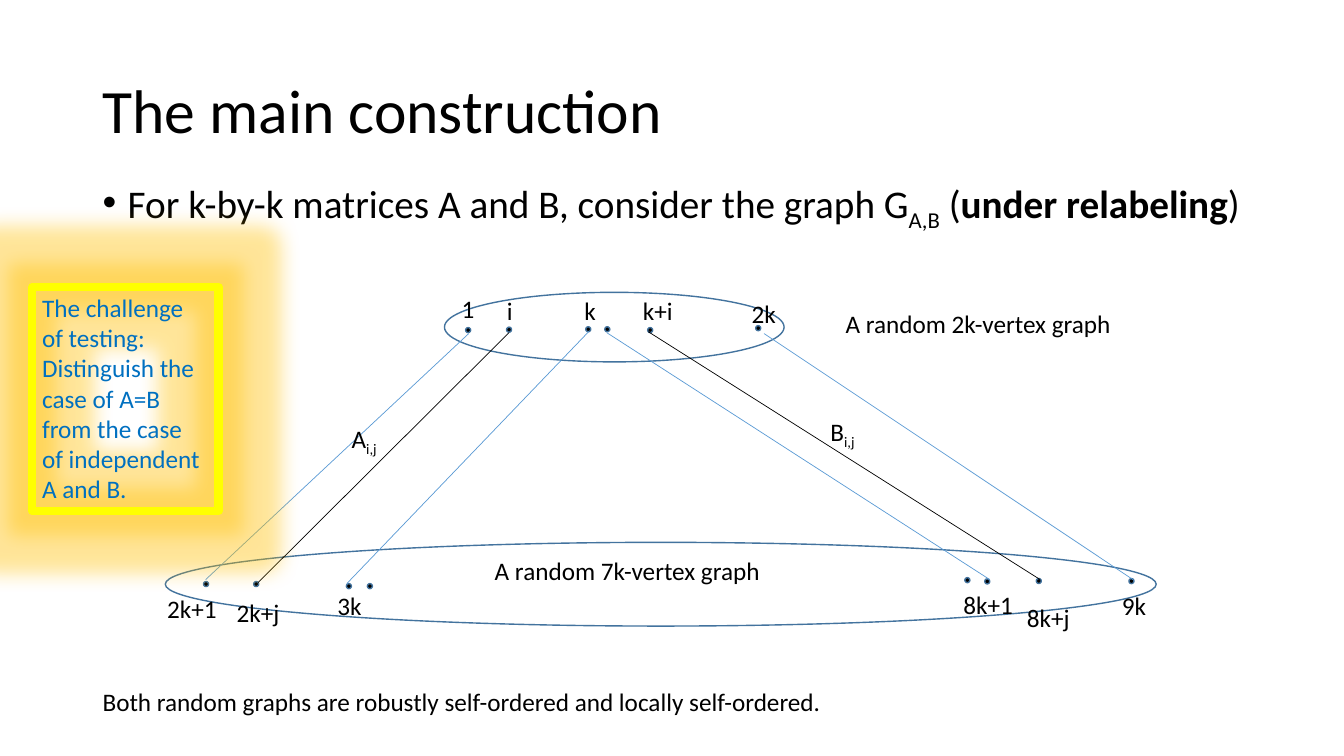
from pptx import Presentation
from pptx.dml.color import RGBColor
from pptx.enum.shapes import MSO_CONNECTOR, MSO_SHAPE
from pptx.enum.text import MSO_ANCHOR, PP_ALIGN
from pptx.oxml.ns import qn
from pptx.util import Pt
from lxml import etree

OVAL, RECT = MSO_SHAPE.OVAL, MSO_SHAPE.RECTANGLE
STRAIGHT = MSO_CONNECTOR.STRAIGHT
TOP, MIDDLE = MSO_ANCHOR.TOP, MSO_ANCHOR.MIDDLE
LEFT = PP_ALIGN.LEFT

THEME = {
    "font": "Calibri", "title": 44, "body": 28, "label": 18,
    "ink": "000000", "paper": "FFFFFF", "outline": "43739E",
    "edge": "5B9BD5", "challenge": "0070C0", "frame": "FFFF00", "glow": "FFC000",
}
SUB, BOLD = "sub", "bold"

TITLE = [("The main construction", None)]
STATEMENT = [
    ("For k-by-k matrices A and B, consider the graph G", None),
    ("A,B", SUB), (" (", None), ("under relabeling", BOLD), (")", None),
]
CHALLENGE = [("The challenge of testing: Distinguish the case of A=B "
              "from the case of independent A and B.", None)]

GRAPH_OUTLINES = [(317.5, 208.8, 242.6, 49.7), (118.1, 387.4, 707.8, 59.8)]
VERTICES = [
    (334.4, 235.8), (363.6, 235.5), (420.2, 235.2), (541.6, 234.4),
    (433.8, 235.2), (464.4, 235.8),
    (147.2, 417.2), (183, 417.2), (249.2, 418.7), (264.2, 418.7),
    (808.2, 415.1), (705.2, 415.3), (691, 414.4), (742, 415),
]
VERTEX_LABELS = [
    ("1", 322.6, 205.9, 23.8), ("i", 355, 207.4, 18.7), ("k", 410.4, 207.4, 23),
    ("k+i", 452.2, 207.4, 36), ("2k", 529.9, 209.5, 31.7),
    ("2k+1", 112.3, 420.5, 50.4), ("2k+j", 162, 423.4, 45.4), ("3k", 234, 418.3, 31.7),
    ("8k+1", 681.1, 417.6, 50.4), ("9k", 794.2, 418.3, 31.7), ("8k+j", 726.5, 427, 45.4),
]
EDGES = [
    ("edge", 334.8, 238.3, 146.9, 414),
    ("edge", 420.5, 236.9, 247.7, 416.9),
    ("edge", 433.4, 237.6, 707, 414),
    ("edge", 545.8, 238.3, 809.3, 414),
    ("ink", 363.6, 237.6, 184.3, 416.2),
    ("ink", 463, 236.9, 743, 414),
]
CAPTIONS = [
    ([("A", None), ("i,j", SUB)], 244.1, 298.8, 36.7),
    ([("B", None), ("i,j", SUB)], 586.1, 293.8, 36.7),
    ([("A random 2k-vertex graph", None)], 596.9, 216.7, 210.2),
    ([("A random 7k-vertex graph", None)], 346.3, 393.1, 210.2),
    ([("Both random graphs are robustly self-ordered and locally self-ordered.", None)],
     66.2, 486.7, 848.2),
]
LABEL_HEIGHT = 29.08
VERTEX_SIZE = 3.6
GLOW_RADIUS = 28


def color(name):
    return RGBColor.from_string(THEME[name])


def write(holder, pieces, size="label", ink="ink", wrap=True, anchor=TOP):
    frame = holder.text_frame
    frame.word_wrap = wrap
    frame.vertical_anchor = anchor
    paragraph = frame.paragraphs[0]
    paragraph.alignment = LEFT
    for words, style in pieces:
        run = paragraph.add_run()
        run.text = words
        run.font.name = THEME["font"]
        run.font.size = Pt(THEME[size])
        run.font.color.rgb = color(ink)
        if style == BOLD:
            run.font.bold = True
        if style == SUB:
            run.font._element.set("baseline", "-25000")
    return paragraph


def add_text(slide, box, pieces, **options):
    holder = slide.shapes.add_textbox(*map(Pt, box))
    return write(holder, pieces, **options)


def add_outline(slide, kind, box, fill, line, width):
    outline = slide.shapes.add_shape(kind, *map(Pt, box))
    outline.shadow.inherit = False
    if fill:
        outline.fill.solid()
        outline.fill.fore_color.rgb = color(fill)
    else:
        outline.fill.background()
    outline.line.color.rgb = color(line)
    outline.line.width = Pt(width)
    return outline


def add_edge(slide, ink, *ends):
    edge = slide.shapes.add_connector(STRAIGHT, *map(Pt, ends))
    edge.line.color.rgb = color(ink)
    edge.line.width = Pt(0.5)
    etree.SubElement(edge._element.spPr, qn("a:effectLst"))


def add_bullet(paragraph):
    properties = paragraph._p.get_or_add_pPr()
    properties.set("marL", str(Pt(18)))
    properties.set("indent", str(-Pt(18)))
    etree.SubElement(properties, qn("a:buFont")).set("typeface", "Arial")
    etree.SubElement(properties, qn("a:buChar")).set("char", "•")


def add_glow(outline):
    effects = outline._element.spPr.find(qn("a:effectLst"))
    glow = etree.SubElement(effects, qn("a:glow"), rad=str(Pt(GLOW_RADIUS)))
    tint = etree.SubElement(glow, qn("a:srgbClr"), val=THEME["glow"])
    etree.SubElement(tint, qn("a:alpha"), val="40000")


def main():
    deck = Presentation()
    deck.slide_width, deck.slide_height = Pt(960), Pt(540)
    slide = deck.slides.add_slide(deck.slide_layouts[6])

    heading = add_text(slide, (66.2, 28.8, 828, 104.4), TITLE, size="title", anchor=MIDDLE)
    heading.line_spacing = 0.9
    statement = add_text(slide, (66.2, 125.3, 847.4, 340.6), STATEMENT, size="body")
    statement.line_spacing = 0.9
    statement.space_before = Pt(10)
    add_bullet(statement)

    for box in GRAPH_OUTLINES:
        add_outline(slide, OVAL, box, "paper", "outline", 1)
    for x, y in VERTICES:
        corner = (x - VERTEX_SIZE / 2, y - VERTEX_SIZE / 2)
        add_outline(slide, OVAL, (*corner, VERTEX_SIZE, VERTEX_SIZE), "ink", "outline", 1)
    for name, x, y, width in VERTEX_LABELS:
        add_text(slide, (x, y, width, LABEL_HEIGHT), [(name, None)], wrap=False)
    for edge in EDGES:
        add_edge(slide, *edge)
    for pieces, x, y, width in CAPTIONS:
        add_text(slide, (x, y, width, LABEL_HEIGHT), pieces)

    challenge = add_outline(slide, RECT, (23, 205.2, 133.2, 159.8), None, "frame", 6)
    add_glow(challenge)
    write(challenge, CHALLENGE, ink="challenge")

    deck.save("out.pptx")


if __name__ == "__main__":
    main()
